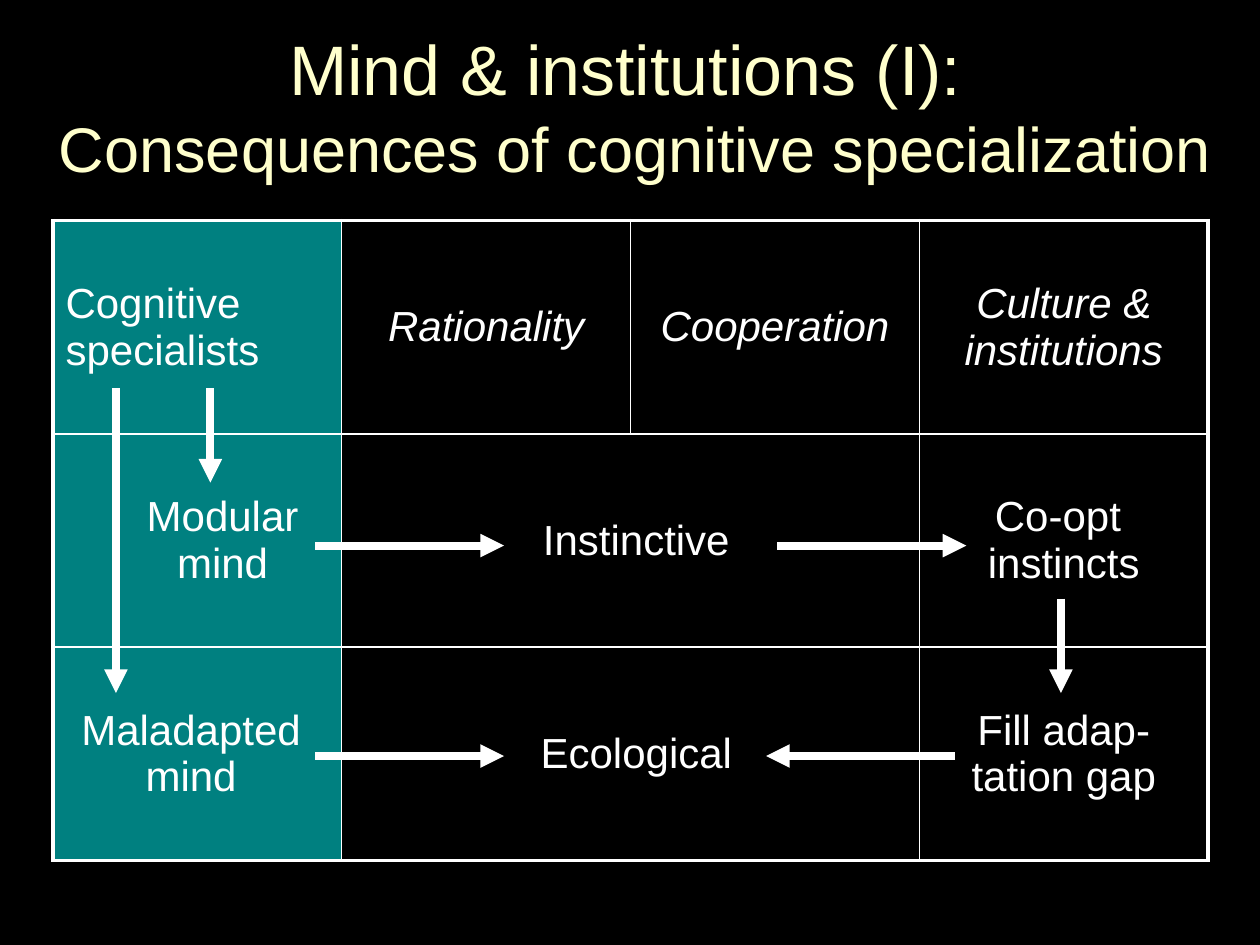
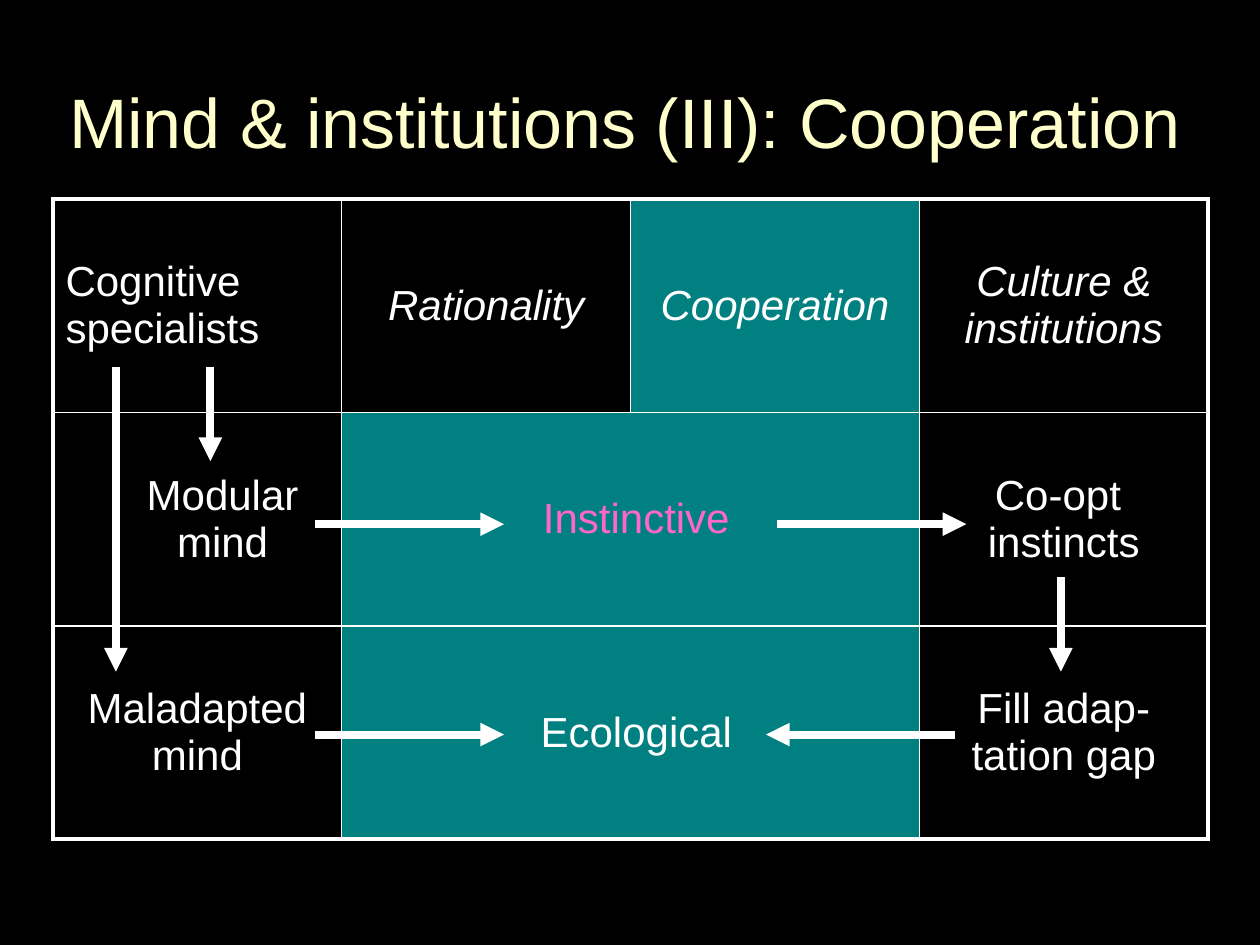
from dataclasses import dataclass

from lxml import etree
from pptx import Presentation
from pptx.dml.color import RGBColor
from pptx.enum.shapes import MSO_CONNECTOR
from pptx.enum.text import MSO_ANCHOR, PP_ALIGN
from pptx.oxml.ns import qn
from pptx.util import Inches, Pt

STRAIGHT = MSO_CONNECTOR.STRAIGHT
MIDDLE = MSO_ANCHOR.MIDDLE
LEFT, CENTER = PP_ALIGN.LEFT, PP_ALIGN.CENTER


@dataclass(frozen=True)
class Theme:
    font: str = "Arial"
    background: str = "000000"
    title: str = "FFFFCC"
    text: str = "FFFFFF"
    line: str = "FFFFFF"
    highlight: str = "008080"
    accent: str = "FF66CC"
    title_size: float = 40
    subtitle_size: float = 36
    body_size: float = 24
    arrow_width: float = 4.5
    outer_border: float = 2.25
    inner_border: float = 1


THEME = Theme()

GRID_LEFT, GRID_WIDTH, GRID_HEIGHT = 0.42, 9.17, 5.08
CONCEPTS = [
    ["Cognitive specialists", "Rationality", "Cooperation", "Culture & institutions"],
    ["Modular mind", " Instinctive", None, "Co-opt \ninstincts"],
    ["Maladapted mind", " Ecological", None, "Fill adap-\ntation gap"],
]
ROWS, COLUMNS = len(CONCEPTS), len(CONCEPTS[0])
MODULAR_INDENT = 0.5

# Arrow tails and tips: x from the slide edge, y from the top of the grid
INFLUENCES = [
    ((2.5, 4.25), (4, 4.25)),
    ((2.5, 2.58), (4, 2.58)),
    ((6.17, 2.58), (7.67, 2.58)),
    ((7.58, 4.25), (6.08, 4.25)),
    ((0.92, 1.33), (0.92, 3.75)),
    ((1.67, 1.33), (1.67, 2.08)),
    ((8.42, 3), (8.42, 3.75)),
]


class Deck:
    def __init__(self, theme):
        self.theme = theme
        self.presentation = Presentation()
        self.presentation.slide_width = Inches(10)
        self.presentation.slide_height = Inches(7.5)
        self.slide = None

    def new_slide(self):
        blank = self.presentation.slide_layouts[6]
        self.slide = self.presentation.slides.add_slide(blank)
        fill = self.slide.background.fill
        fill.solid()
        fill.fore_color.rgb = RGBColor.from_string(self.theme.background)

    def add_lines(self, paragraph, lines, color, italic=False):
        """Fill a paragraph with (text, size) lines separated by line breaks."""
        for number, (text, size) in enumerate(lines):
            if number:
                paragraph.add_line_break()
            run = paragraph.add_run()
            run.text = text
            run.font.name = self.theme.font
            run.font.size = Pt(size)
            run.font.italic = italic
            run.font.color.rgb = RGBColor.from_string(color)

    def title(self, lines, left, top, width, height):
        box = self.slide.shapes.add_textbox(
            Inches(left), Inches(top), Inches(width), Inches(height))
        frame = box.text_frame
        frame.word_wrap = True
        frame.vertical_anchor = MIDDLE
        paragraph = frame.paragraphs[0]
        paragraph.alignment = CENTER
        self.add_lines(paragraph, lines, self.theme.title)

    def border(self, cell, row, column):
        """Draw the cell's sides, heavier along the rim of the grid."""
        on_rim = {
            "a:lnL": column == 0,
            "a:lnR": column == COLUMNS - 1,
            "a:lnT": row == 0,
            "a:lnB": row == ROWS - 1,
        }
        properties = cell._tc.get_or_add_tcPr()
        for side, outer in on_rim.items():
            width = self.theme.outer_border if outer else self.theme.inner_border
            line = etree.SubElement(properties, qn(side), w=str(int(Pt(width))))
            fill = etree.SubElement(line, qn("a:solidFill"))
            etree.SubElement(fill, qn("a:srgbClr"), val=self.theme.line)

    def concept_grid(self, top, highlighted, accented, maladapted_indent):
        grid = self.slide.shapes.add_table(
            ROWS, COLUMNS, Inches(GRID_LEFT), Inches(top),
            Inches(GRID_WIDTH), Inches(GRID_HEIGHT)).table
        grid.first_row = grid.horz_banding = False
        for column in grid.columns:
            column.width = Inches(GRID_WIDTH / COLUMNS)
        for row in grid.rows:
            row.height = Inches(GRID_HEIGHT / ROWS)

        for row, concepts in enumerate(CONCEPTS):
            for column, concept in enumerate(concepts):
                place = (row, column)
                cell = grid.cell(row, column)
                self.border(cell, row, column)
                cell.fill.solid()
                cell.fill.fore_color.rgb = RGBColor.from_string(
                    self.theme.highlight if place in highlighted
                    else self.theme.background)
                if concept is None:
                    grid.cell(row, column - 1).merge(cell)
                    continue
                cell.vertical_anchor = MIDDLE
                paragraph = cell.text_frame.paragraphs[0]
                paragraph.alignment = LEFT if place == (0, 0) else CENTER
                lines = [(text, self.theme.body_size) for text in concept.split("\n")]
                color = self.theme.accent if place in accented else self.theme.text
                self.add_lines(paragraph, lines, color, italic=row == 0 and column > 0)

        grid.cell(1, 0).margin_left = Inches(MODULAR_INDENT)
        grid.cell(2, 0).margin_left = Inches(maladapted_indent)

    def arrow(self, start, end):
        (x1, y1), (x2, y2) = start, end
        arrow = self.slide.shapes.add_connector(
            STRAIGHT, Inches(x1), Inches(y1), Inches(x2), Inches(y2))
        arrow.line.color.rgb = RGBColor.from_string(self.theme.line)
        arrow.line.width = Pt(self.theme.arrow_width)
        properties = arrow._element.spPr
        etree.SubElement(properties.find(qn("a:ln")), qn("a:tailEnd"), type="triangle")
        etree.SubElement(properties, qn("a:effectLst"))

    def concept_map(self, top, highlighted, accented=(), maladapted_indent=0.1):
        """Draw the grid and the arrows that link its concepts."""
        self.concept_grid(top, highlighted, accented, maladapted_indent)
        for (x1, y1), (x2, y2) in INFLUENCES:
            self.arrow((x1, top + y1), (x2, top + y2))


def main():
    deck = Deck(THEME)

    deck.new_slide()
    deck.title([("Mind & institutions (I): ", THEME.title_size),
                ("Consequences of cognitive specialization", THEME.subtitle_size)],
               0.25, 0.17, 9.58, 1.33)
    deck.concept_map(1.75, highlighted={(row, 0) for row in range(ROWS)},
                     maladapted_indent=0)

    deck.new_slide()
    deck.title([("Mind & institutions (III): Cooperation", THEME.title_size)],
               0.42, 0.42, 9.08, 1.08)
    deck.concept_map(1.58, highlighted={(0, 2), (1, 1), (1, 2), (2, 1), (2, 2)},
                     accented={(1, 1)})

    deck.presentation.save("out.pptx")


if __name__ == "__main__":
    main()
